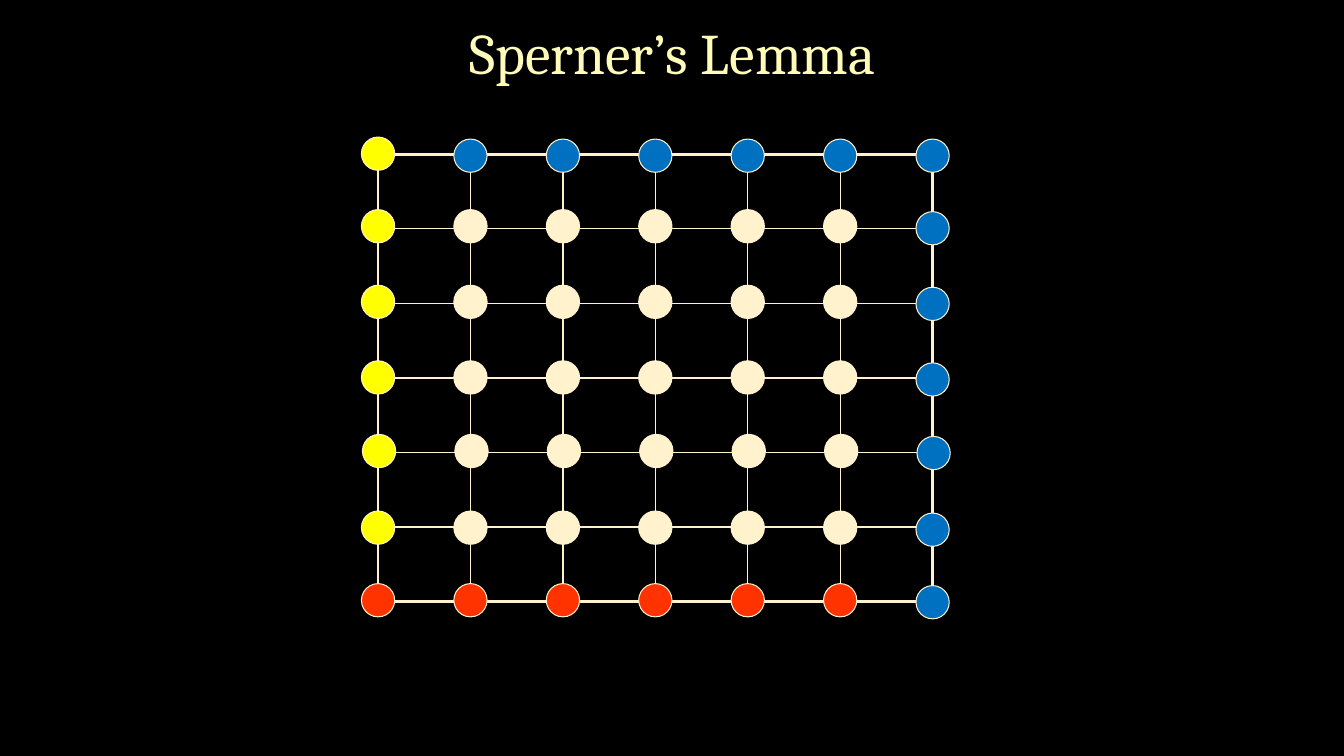
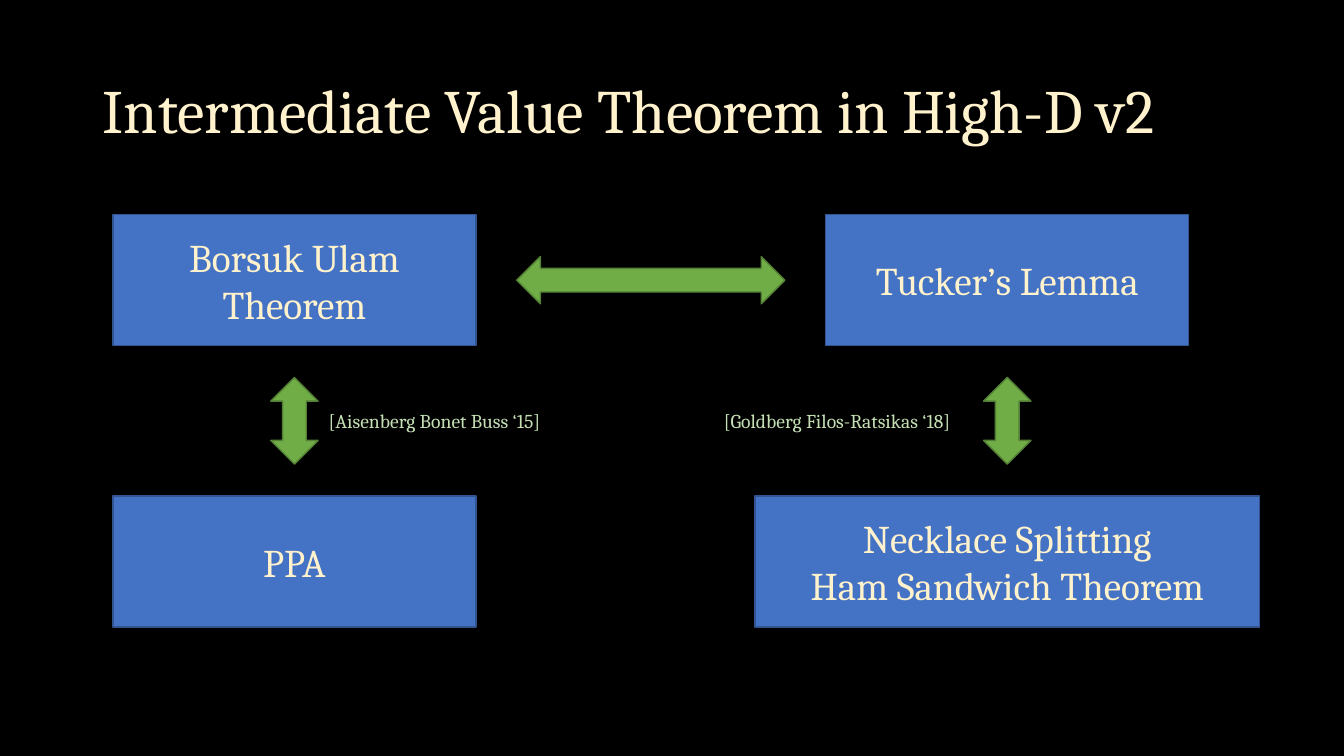
from dataclasses import dataclass
from itertools import product

from lxml.etree import SubElement
from pptx import Presentation
from pptx.dml.color import RGBColor
from pptx.enum.shapes import MSO_SHAPE
from pptx.enum.text import MSO_ANCHOR, MSO_AUTO_SIZE, PP_ALIGN
from pptx.oxml.ns import qn
from pptx.slide import Slide
from pptx.table import _Cell
from pptx.text.text import TextFrame
from pptx.util import Inches, Pt


@dataclass(frozen=True)
class Theme:
    font: str = "Cambria"
    background: str = "000000"
    cream: str = "FFF2CC"
    pale_yellow: str = "FFFCB9"
    yellow: str = "FFFF00"
    blue: str = "0070C0"
    red: str = "FF3300"
    box: str = "4472C4"
    box_edge: str = "325491"
    arrow: str = "70AD47"
    arrow_edge: str = "538035"
    citation: str = "C5E0B4"
    lemma_title_size: float = 41
    title_size: float = 44
    box_size: float = 28
    citation_size: float = 14
    dot_line: float = 0.75
    edge_line: float = 1
    inner_line: float = 1
    outer_line: float = 2.25


THEME = Theme()


@dataclass(frozen=True)
class Area:
    left: float
    top: float
    width: float
    height: float

    def lengths(self) -> tuple[int, int, int, int]:
        return (Inches(self.left), Inches(self.top),
                Inches(self.width), Inches(self.height))


def around(center_x: float, center_y: float, width: float, height: float) -> Area:
    return Area(center_x - width / 2, center_y - height / 2, width, height)


@dataclass(frozen=True)
class Look:
    fill: str
    line: str
    line_width: float


@dataclass(frozen=True)
class TextStyle:
    size: float
    color: str
    align: PP_ALIGN = PP_ALIGN.LEFT
    anchor: MSO_ANCHOR = MSO_ANCHOR.MIDDLE
    line_spacing: float = 1.0


@dataclass(frozen=True)
class Statement:
    text: str
    center_x: float
    center_y: float
    width: float = 3.6


@dataclass(frozen=True)
class Equivalence:
    center_x: float
    center_y: float
    length: float
    rotation: float = 0


@dataclass(frozen=True)
class Citation:
    text: str
    left: float


LEMMA_TITLE = TextStyle(THEME.lemma_title_size, THEME.pale_yellow,
                        PP_ALIGN.CENTER, line_spacing=0.9)
TITLE = TextStyle(THEME.title_size, THEME.cream, line_spacing=0.9)
STATEMENT = TextStyle(THEME.box_size, THEME.cream, PP_ALIGN.CENTER)
CITATION = TextStyle(THEME.citation_size, THEME.citation, anchor=MSO_ANCHOR.TOP)
BOX_LOOK = Look(THEME.box, THEME.box_edge, THEME.edge_line)
ARROW_LOOK = Look(THEME.arrow, THEME.arrow_edge, THEME.edge_line)

GRID = Area(3.75, 1.53, 5.5, 4.44)
CELLS = 6
DOT = 0.33
DOT_ROW_TOPS = (1.36, 2.08, 2.83, 3.58, 4.31, 5.07, 5.79)
BLUE_DROP = 0.02
SHIFTED_ROW = 4

LEFT_X, RIGHT_X = 2.92, 9.99
UPPER_Y, LOWER_Y = 2.78, 5.57
MIDDLE_X, MIDDLE_Y = (LEFT_X + RIGHT_X) / 2, (UPPER_Y + LOWER_Y) / 2
BOX_HEIGHT, ARROW_HEIGHT = 1.3, 0.47

STATEMENTS = (
    Statement("Borsuk Ulam Theorem", LEFT_X, UPPER_Y),
    Statement("Tucker’s Lemma", RIGHT_X, UPPER_Y),
    Statement("PPA", LEFT_X, LOWER_Y),
    Statement("Necklace Splitting\nHam Sandwich Theorem", RIGHT_X, LOWER_Y, 5),
)
EQUIVALENCES = (
    Equivalence(MIDDLE_X, UPPER_Y, 2.66),
    Equivalence(LEFT_X, MIDDLE_Y, 0.86, 90),
    Equivalence(RIGHT_X, MIDDLE_Y, 0.86, 90),
)
CITATIONS = (
    Citation("[Aisenberg Bonet Buss ‘15]", 3.16),
    Citation("[Goldberg Filos-Ratsikas ‘18]", 7.08),
)


def write(frame: TextFrame, text: str, style: TextStyle) -> None:
    frame.text = text
    frame.word_wrap = True
    frame.vertical_anchor = style.anchor
    for paragraph in frame.paragraphs:
        paragraph.alignment = style.align
        paragraph.line_spacing = style.line_spacing
        for run in paragraph.runs:
            run.font.name = THEME.font
            run.font.size = Pt(style.size)
            run.font.color.rgb = RGBColor.from_string(style.color)


def add_text(slide: Slide, area: Area, text: str, style: TextStyle) -> TextFrame:
    frame = slide.shapes.add_textbox(*area.lengths()).text_frame
    write(frame, text, style)
    return frame


def add_figure(slide: Slide, preset: MSO_SHAPE, area: Area, look: Look,
               rotation: float = 0) -> TextFrame:
    figure = slide.shapes.add_shape(preset, *area.lengths())
    figure.shadow.inherit = False
    figure.rotation = rotation
    figure.fill.solid()
    figure.fill.fore_color.rgb = RGBColor.from_string(look.fill)
    figure.line.color.rgb = RGBColor.from_string(look.line)
    figure.line.width = Pt(look.line_width)
    return figure.text_frame


def border_cell(cell: _Cell, row: int, column: int) -> None:
    properties = cell._tc.get_or_add_tcPr()
    outer_sides = {
        "a:lnL": column == 0,
        "a:lnR": column == CELLS - 1,
        "a:lnT": row == 0,
        "a:lnB": row == CELLS - 1,
    }
    for side, is_outer in outer_sides.items():
        width = THEME.outer_line if is_outer else THEME.inner_line
        border = SubElement(properties, qn(side), w=str(Pt(width)))
        paint = SubElement(border, qn("a:solidFill"))
        SubElement(paint, qn("a:srgbClr"), val=THEME.cream)
    cell.fill.background()


def add_grid(slide: Slide) -> None:
    grid = slide.shapes.add_table(CELLS, CELLS, *GRID.lengths()).table
    grid.first_row = False
    grid.horz_banding = False
    for column in grid.columns:
        column.width = Inches(GRID.width / CELLS)
    for row in grid.rows:
        row.height = Inches(GRID.height / CELLS)
    for row, column in product(range(CELLS), repeat=2):
        border_cell(grid.cell(row, column), row, column)


def dot_color(row: int, column: int) -> str:
    if column == CELLS or (row == 0 and column > 0):
        return THEME.blue
    if row == CELLS:
        return THEME.red
    return THEME.yellow if column == 0 else THEME.cream


def add_dot(slide: Slide, row: int, column: int) -> None:
    color = dot_color(row, column)
    shift = 0.01 if row == SHIFTED_ROW else 0
    left = GRID.left + column * GRID.width / CELLS - DOT / 2 + shift
    top = DOT_ROW_TOPS[row] + (BLUE_DROP if color == THEME.blue else 0)
    add_figure(slide, MSO_SHAPE.OVAL, Area(left, top, DOT, DOT),
               Look(color, THEME.cream, THEME.dot_line))


def build_sperner(slide: Slide) -> None:
    add_grid(slide)
    for row, column in product(range(CELLS + 1), repeat=2):
        add_dot(slide, row, column)
    add_text(slide, Area(0.92, -0.17, 11.5, 1.45), "Sperner’s Lemma", LEMMA_TITLE)


def build_intermediate_value(slide: Slide) -> None:
    add_text(slide, Area(0.92, 0.4, 11.72, 1.45),
             "Intermediate Value Theorem in High-D v2", TITLE)
    for statement in STATEMENTS:
        area = around(statement.center_x, statement.center_y,
                      statement.width, BOX_HEIGHT)
        frame = add_figure(slide, MSO_SHAPE.RECTANGLE, area, BOX_LOOK)
        write(frame, statement.text, STATEMENT)
    for link in EQUIVALENCES:
        area = around(link.center_x, link.center_y, link.length, ARROW_HEIGHT)
        add_figure(slide, MSO_SHAPE.LEFT_RIGHT_ARROW, area, ARROW_LOOK, link.rotation)
    for citation in CITATIONS:
        frame = add_text(slide, Area(citation.left, 4.01, 2.91, 0.34),
                         citation.text, CITATION)
        frame.auto_size = MSO_AUTO_SIZE.SHAPE_TO_FIT_TEXT


def main() -> None:
    deck = Presentation()
    deck.slide_width = Inches(13.33)
    deck.slide_height = Inches(7.5)
    backdrop = deck.slide_master.background.fill
    backdrop.solid()
    backdrop.fore_color.rgb = RGBColor.from_string(THEME.background)
    blank = deck.slide_layouts[6]
    for build in (build_sperner, build_intermediate_value):
        build(deck.slides.add_slide(blank))
    deck.save("out.pptx")


if __name__ == "__main__":
    main()
